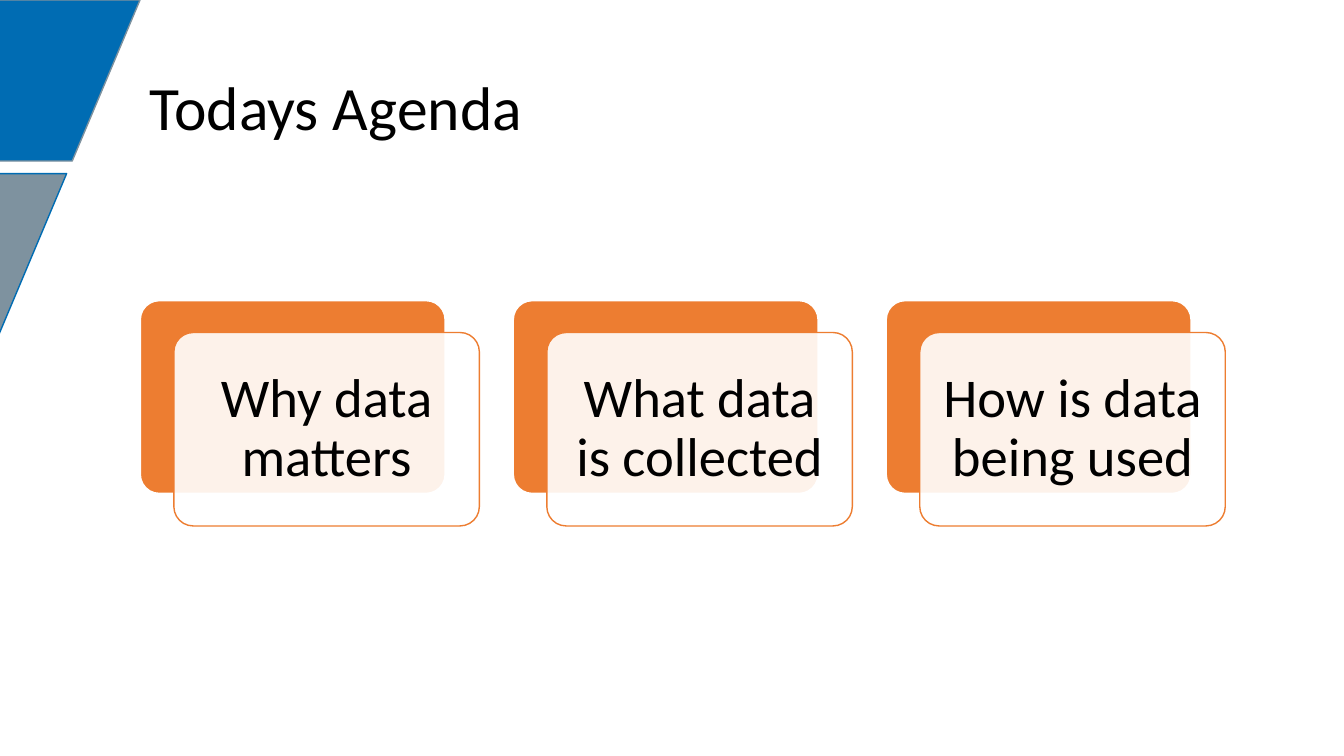
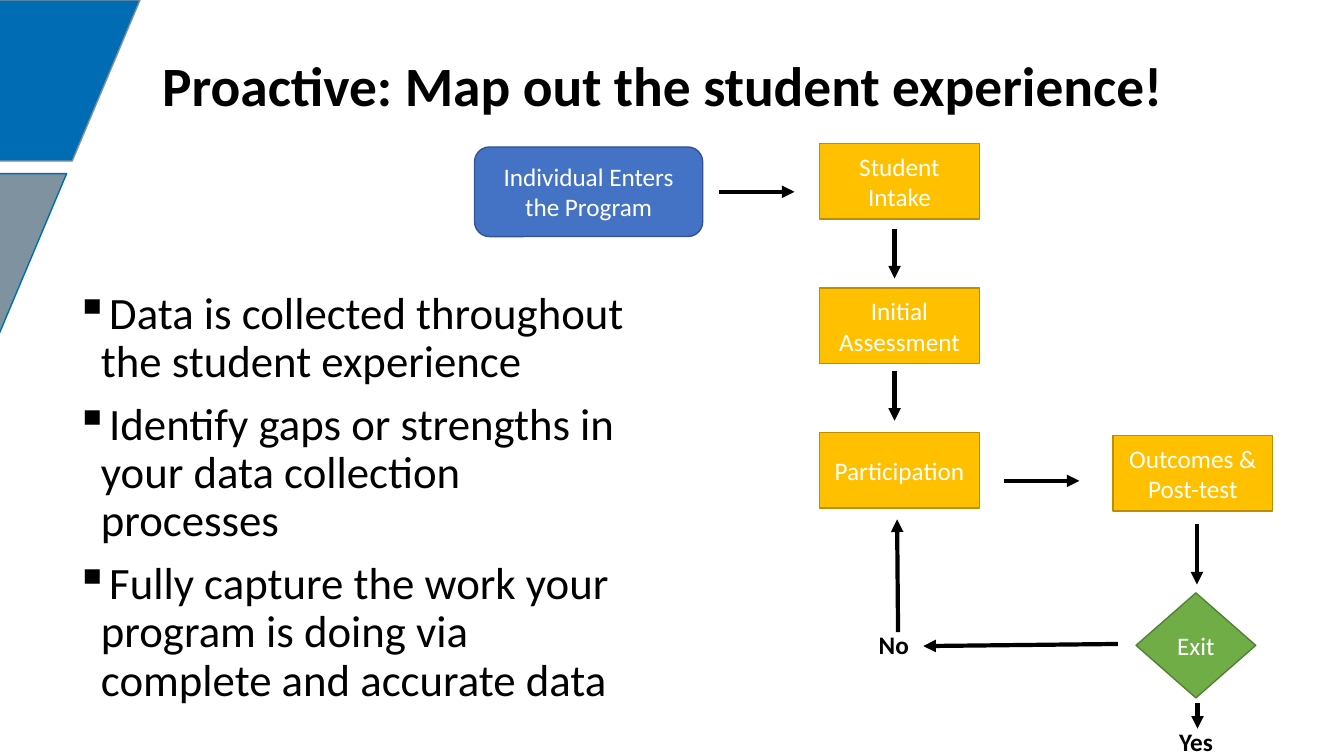
from lxml.etree import SubElement
from pptx import Presentation
from pptx.dml.color import RGBColor
from pptx.enum.shapes import MSO_CONNECTOR, MSO_SHAPE
from pptx.enum.text import MSO_ANCHOR, PP_ALIGN
from pptx.oxml.ns import qn
from pptx.util import Pt

BLUE, GRAY, ORANGE = "006CB3", "7E929F", "ED7D31"
BLACK, WHITE = "000000", "FFFFFF"
YELLOW, OCHRE = "FFC000", "BD8E00"
TITLE = {"size": Pt(44), "bold": False}
STEP = {"size": Pt(18)}
LABEL = {"size": Pt(18), "bold": True}


def draw(page, preset, frame, fill, line, width=1):
    shape = page.shapes.add_shape(preset, *map(Pt, frame))
    shape.shadow.inherit = False
    shape.fill.solid()
    shape.fill.fore_color.rgb = RGBColor.from_string(fill)
    shape.line.color.rgb = RGBColor.from_string(line)
    shape.line.width = Pt(width)
    return shape


def write(shape, lines, text_format, color=BLACK, align=PP_ALIGN.LEFT,
          anchor=MSO_ANCHOR.MIDDLE, spacing=0.9):
    frame = shape.text_frame
    frame.word_wrap = True
    frame.vertical_anchor = anchor
    for index, line in enumerate(lines):
        para = frame.add_paragraph() if index else frame.paragraphs[0]
        para.alignment = align
        para.line_spacing = spacing
        span = para.add_run()
        span.text = line
        span.font.name = "Calibri"
        span.font.color.rgb = RGBColor.from_string(color)
        for name, value in text_format.items():
            setattr(span.font, name, value)


deck = Presentation()
deck.slide_width, deck.slide_height = Pt(960), Pt(540)
layout = deck.slide_layouts[6]
for placeholder in list(layout.placeholders):
    layout.shapes.element.remove(placeholder.element)
agenda = deck.slides.add_slide(layout)
journey = deck.slides.add_slide(layout)

for left, top, fill, line in [(-142, 0, BLUE, GRAY), (-194.4, 124, GRAY, BLUE)]:
    band = draw(agenda, MSO_SHAPE.FLOWCHART_DATA, (left, top, 242, 115), fill, line)
    layout.shapes.element.append(band.element)

titles = [
    (agenda, "Todays Agenda", (100, 44, 664, 70.5), {}),
    (journey, "Proactive: Map out the student experience!", (108.7, 28, 757.5, 70.5),
     {"size": Pt(39.6), "bold": True}),
]
for page, text, frame, changes in titles:
    box = page.shapes.add_textbox(*map(Pt, frame))
    write(box, [text], TITLE | changes)

topics = ["Why data matters", "What data is collected", "How is data being used"]
for column, topic in enumerate(topics):
    left, top, width, height = 100 + 266.4 * column, 214.5, 218.2, 138.2
    back = draw(agenda, MSO_SHAPE.ROUNDED_RECTANGLE, (left, top, width, height),
                ORANGE, WHITE, 1.5)
    front = draw(agenda, MSO_SHAPE.ROUNDED_RECTANGLE,
                 (left + 24.2, top + 23, width, height), WHITE, ORANGE)
    for card in (back, front):
        card.adjustments[0] = 0.1
    white = front.fill._xPr.find(qn("a:solidFill"))[0]
    SubElement(white, qn("a:alpha"), val="90000")
    for side in ("left", "top", "right", "bottom"):
        setattr(front.text_frame, f"margin_{side}", Pt(11.5))
    write(front, [topic], {"size": Pt(39)}, align=PP_ALIGN.CENTER)

steps = [
    ("Individual Enters the Program", MSO_SHAPE.ROUNDED_RECTANGLE,
     (339, 105, 163, 64), "4472C4", "325491"),
    ("Outcomes & Post-test", MSO_SHAPE.RECTANGLE, (795, 311, 114, 54), YELLOW, OCHRE),
    ("Exit", MSO_SHAPE.DIAMOND, (811.5, 423.5, 85.5, 75), "70AD47", "538035"),
]
for row, text in enumerate(["Student Intake", "Initial Assessment", "Participation"]):
    steps.append((text, MSO_SHAPE.RECTANGLE, (585.5, 102.5 + 103.2 * row, 114, 54),
                  YELLOW, OCHRE))
for text, preset, frame, fill, line in steps:
    step = draw(journey, preset, frame, fill, line)
    write(step, [text], STEP, WHITE, PP_ALIGN.CENTER, spacing=1)

arrows = [
    (513.5, 137, 567.5, 137),
    (639, 163.5, 639, 199),
    (639, 265, 639, 300.5),
    (717, 343.5, 771, 343.5),
    (855, 374.5, 855, 417.5),
    (798.5, 460, 659.5, 461.5),
    (641.5, 451.5, 640.8, 371),
    (855.4, 502, 855.4, 520.5),
]
for ends in arrows:
    arrow = journey.shapes.add_connector(MSO_CONNECTOR.STRAIGHT, *map(Pt, ends))
    arrow.line.color.rgb = RGBColor.from_string(BLACK)
    arrow.line.width = Pt(3)
    SubElement(arrow.line._get_or_add_ln(), qn("a:tailEnd"), type="triangle")
    SubElement(arrow.element.spPr, qn("a:effectLst"))

for text, left, top in [("No", 620.6, 445.7), ("Yes", 835.2, 515)]:
    label = journey.shapes.add_textbox(Pt(left), Pt(top), Pt(41), Pt(25))
    write(label, [text], LABEL, anchor=MSO_ANCHOR.TOP, spacing=1)

points = [
    "Data is collected throughout the student experience",
    "Identify gaps or strengths in your data collection processes",
    "Fully capture the work your program is doing via complete and accurate data",
]
body = journey.shapes.add_textbox(Pt(47), Pt(204), Pt(414), Pt(317.5))
write(body, points, {"size": Pt(32)}, anchor=MSO_ANCHOR.TOP)
for index, para in enumerate(body.text_frame.paragraphs):
    if index:
        para.space_before = Pt(10)
    properties = para._p.get_or_add_pPr()
    properties.set("marL", str(Pt(18)))
    properties.set("indent", str(-Pt(18)))
    SubElement(properties, qn("a:buChar"), char="▪")

deck.save("out.pptx")
